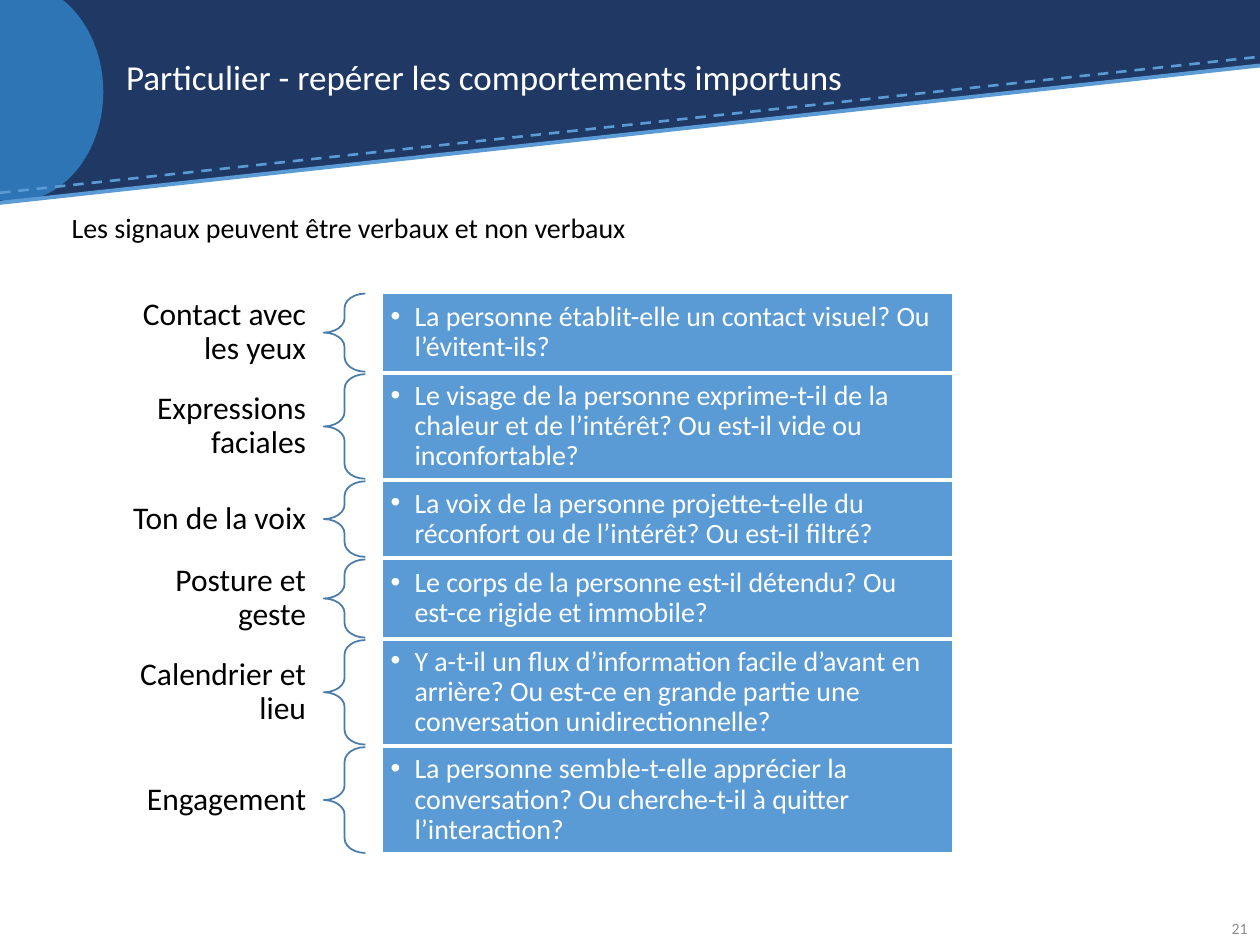
from lxml import etree
from pptx import Presentation
from pptx.dml.color import RGBColor
from pptx.enum.dml import MSO_LINE
from pptx.enum.shapes import MSO_CONNECTOR, MSO_SHAPE
from pptx.enum.text import MSO_ANCHOR, MSO_AUTO_SIZE, PP_ALIGN
from pptx.oxml.ns import qn
from pptx.util import Inches, Pt

NAVY, BLUE, SKY, BRACE = "203864", "2E75B6", "5B9BD5", "497CAB"
WHITE, BLACK, GREY = "FFFFFF", "000000", "8C8C8C"
ROW_GAP = 0.02

# label, label lines, row height, question
SIGNALS = [
    ("Contact avec les yeux", 2, 0.62,
     "La personne établit-elle un contact visuel? Ou l’évitent-ils?"),
    ("Expressions faciales", 2, 0.83,
     "Le visage de la personne exprime-t-il de la chaleur et de l’intérêt? "
     "Ou est-il vide ou inconfortable?"),
    ("Ton de la voix", 1, 0.6,
     "La voix de la personne projette-t-elle du réconfort ou de l’intérêt? "
     "Ou est-il filtré?"),
    ("Posture et geste", 2, 0.62,
     "Le corps de la personne est-il détendu? Ou est-ce rigide et immobile?"),
    ("Calendrier et lieu", 2, 0.83,
     "Y a-t-il un flux d’information facile d’avant en arrière? "
     "Ou est-ce en grande partie une conversation unidirectionnelle?"),
    ("Engagement", 1, 0.84,
     "La personne semble-t-elle apprécier la conversation? "
     "Ou cherche-t-il à quitter l’interaction?"),
]
LABEL_HEIGHTS = {1: 0.36, 2: 0.62}


def color(value):
    return RGBColor.from_string(value)


def add_bullet(para, indent):
    props = para._p.get_or_add_pPr()
    props.set("marL", str(Inches(indent)))
    props.set("indent", str(-Inches(indent)))
    etree.SubElement(props, qn("a:buFont")).set("typeface", "Arial")
    etree.SubElement(props, qn("a:buChar")).set("char", "•")


def write(shape, text, size, ink=BLACK, align=PP_ALIGN.LEFT,
          anchor=MSO_ANCHOR.MIDDLE, insets=(0.1, 0.05), spacing=0.9, bullet=None):
    frame = shape.text_frame
    frame.word_wrap = True
    frame.auto_size = MSO_AUTO_SIZE.NONE
    frame.vertical_anchor = anchor
    frame.margin_left = frame.margin_right = Inches(insets[0])
    frame.margin_top = frame.margin_bottom = Inches(insets[1])
    para = frame.paragraphs[0]
    para.alignment = align
    para.line_spacing = spacing
    if bullet:
        add_bullet(para, bullet)
    span = para.add_run()
    span.text = text
    span.font.name = "Calibri"
    span.font.size = Pt(size)
    span.font.color.rgb = color(ink)


def add_text(page, box, text, size, **style):
    shape = page.shapes.add_textbox(*map(Inches, box))
    write(shape, text, size, **style)


def add_shape(page, kind, box, fill=None, line=None):
    shape = page.shapes.add_shape(kind, *map(Inches, box))
    shape.shadow.inherit = False
    if fill:
        shape.fill.solid()
        shape.fill.fore_color.rgb = color(fill)
    else:
        shape.fill.background()
    if line:
        shape.line.color.rgb = color(line)
        shape.line.width = Pt(1)
    else:
        shape.line.fill.background()
    return shape


def add_line(page, start, end, width, dash=None):
    line = page.shapes.add_connector(MSO_CONNECTOR.STRAIGHT,
                                     *map(Inches, start + end))
    etree.SubElement(line._element.spPr, qn("a:effectLst"))
    line.line.color.rgb = color(SKY)
    line.line.width = Pt(width)
    if dash:
        line.line.dash_style = dash


def add_banner(page, box, text):
    left, top, width, height = box
    band = 0.52
    # Slanted band with its disc
    add_shape(page, MSO_SHAPE.RECTANGLE, (left, top, width, band), NAVY)
    slope = add_shape(page, MSO_SHAPE.RIGHT_TRIANGLE,
                      (left, top + band - 0.01, width, height - band + 0.01), NAVY)
    slope._element.spPr.find(qn("a:xfrm")).set("flipV", "1")
    add_shape(page, MSO_SHAPE.OVAL, (left - 0.59, top - 0.14, 1.41, height + 0.14), BLUE)
    # Edge lines
    right = left + width
    add_line(page, (left, top + 1.53), (right, top + 0.45), 1.5, MSO_LINE.DASH)
    add_line(page, (left, top + 1.61), (right, top + 0.52), 2.25)
    # Title, brought in front of the band
    title = page.shapes.title
    title.left, title.top = Inches(left + 0.9), Inches(top + 0.2)
    title.width, title.height = Inches(8.05), Inches(0.86)
    write(title, text, 20, ink=WHITE)
    title._element.getparent().append(title._element)


def add_signal(page, box, label, lines, question):
    left, top, width, height = box
    label_width, brace_width, brace_gap = 1.67, 0.33, 0.13
    # Label, centred on the row
    label_height = LABEL_HEIGHTS[lines]
    add_text(page, (left, top + (height - label_height) / 2, label_width, label_height),
             label, 18, align=PP_ALIGN.RIGHT, insets=(0.14, 0.05))
    # Brace
    brace = add_shape(page, MSO_SHAPE.LEFT_BRACE,
                      (left + label_width, top, brace_width, height), line=BRACE)
    brace.adjustments[0] = 0.35
    # Question
    offset = label_width + brace_width + brace_gap
    panel = add_shape(page, MSO_SHAPE.RECTANGLE,
                      (left + offset, top, width - offset, height), SKY, WHITE)
    write(panel, question, 16, ink=WHITE, insets=(0.07, 0.07), bullet=0.19)


def add_signals(page, box):
    left, top, width = box
    for label, lines, height, question in SIGNALS:
        add_signal(page, (left, top, width, height), label, lines, question)
        top += height + ROW_GAP


def main():
    deck = Presentation()
    deck.slide_width, deck.slide_height = Inches(10), Inches(7.5)
    page = deck.slides.add_slide(deck.slide_layouts[5])
    add_banner(page, (0, 0, 10, 1.6), "Particulier - repérer les comportements importuns")
    # Introduction
    add_text(page, (0.47, 1.65, 8.83, 0.5),
             "Les signaux peuvent être verbaux et non verbaux", 16, anchor=MSO_ANCHOR.TOP)
    add_signals(page, (0.9, 2.33, 6.66))
    # Page number
    add_text(page, (9.47, 7.17, 0.53, 0.4), "21", 9, ink=GREY,
             align=PP_ALIGN.RIGHT, spacing=1.0)
    deck.save("out.pptx")


if __name__ == "__main__":
    main()
